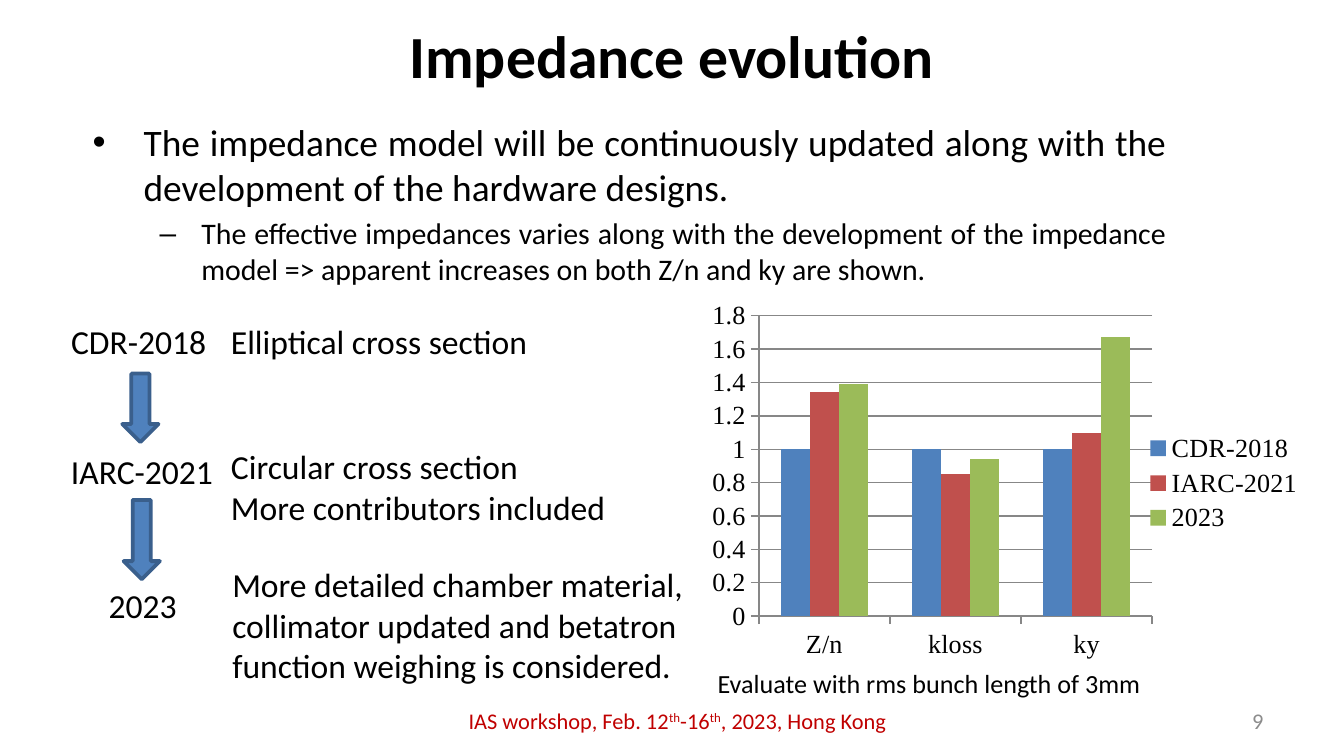
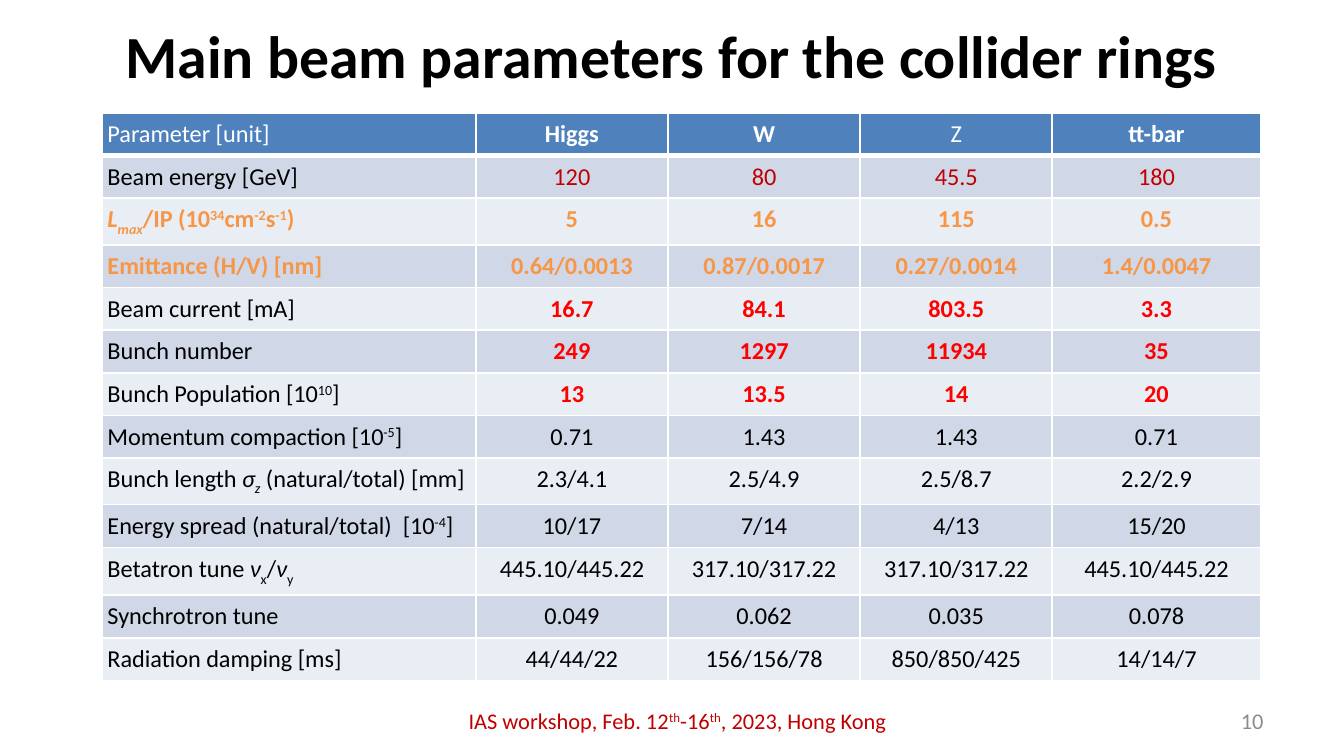
import pptx
import pptx.chart.data
import pptx.dml.color
import pptx.enum.chart
import pptx.enum.shapes
import pptx.enum.text
import pptx.oxml
import pptx.oxml.ns
import pptx.util
from dataclasses import dataclass
from lxml import etree

Inches = pptx.util.Inches
Pt = pptx.util.Pt
qn = pptx.oxml.ns.qn
ALIGN = pptx.enum.text.PP_ALIGN
ANCHOR = pptx.enum.text.MSO_ANCHOR


@dataclass(frozen=True)
class Theme:
    font: str = "Calibri"
    chart_font: str = "Times New Roman"
    black: str = "000000"
    white: str = "FFFFFF"
    blue: str = "4F81BD"
    blue_edge: str = "3A5F8C"
    brick: str = "C0504D"
    green: str = "9BBB59"
    grid: str = "878787"
    number: str = "8C8C8C"
    dark_red: str = "C00000"
    red: str = "FF0000"
    orange: str = "F79646"
    bands: tuple = ("D0D8E8", "E9EDF4")
    title: int = 32
    body: int = 20
    sub: int = 16
    label: int = 18
    note: int = 14
    cell: int = 13
    footer: int = 12


T = Theme()


def rgb(color):
    return pptx.dml.color.RGBColor.from_string(color)


def sup(text):
    return text, 30, False


def sub(text, drop=25, italic=True):
    return text, -drop, italic


def ital(text):
    return text, 0, True


FOOTER = ["IAS workshop, Feb. 12", sup("th"), "-16", sup("th"), ", 2023, Hong Kong"]


class Deck:
    def __init__(self, theme):
        self.t = theme
        self.prs = pptx.Presentation()
        # Widescreen, 16:9
        self.prs.slide_width = Inches(10)
        self.prs.slide_height = Inches(10 * 9 / 16)
        self.s = None

    def slide(self, title, number):
        """Start a slide with the shared title, footer and page number."""
        t = self.t
        self.s = self.prs.slides.add_slide(self.prs.slide_layouts[6])
        self.text(0.5, 0.06, 9, 0.7, [title], t.title, bold=True,
                  align=ALIGN.CENTER, anchor=ANCHOR.MIDDLE)
        self.text(3.27, 5.21, 3.54, 0.3, [FOOTER], t.footer, t.dark_red,
                  align=ALIGN.CENTER, anchor=ANCHOR.MIDDLE)
        self.text(7.17, 5.21, 2.33, 0.3, [str(number)], t.footer, t.number,
                  align=ALIGN.RIGHT, anchor=ANCHOR.MIDDLE)

    def runs(self, p, parts, size, color, bold=False):
        """Fill a paragraph from a string or a list of plain and styled parts."""
        for part in [parts] if isinstance(parts, str) else parts:
            text, base, italic = (part, 0, False) if isinstance(part, str) else part
            r = p.add_run()
            r.text = text
            f = r.font
            f.name, f.size, f.bold, f.italic = self.t.font, Pt(size), bold, italic
            f.color.rgb = rgb(color)
            if base:
                r._r.get_or_add_rPr().set("baseline", str(base * 1000))

    def box(self, x, y, w, h, wrap=True, anchor=ANCHOR.TOP):
        sp = self.s.shapes.add_textbox(Inches(x), Inches(y), Inches(w), Inches(h))
        tf = sp.text_frame
        tf.word_wrap = wrap
        tf.vertical_anchor = anchor
        return tf

    def text(self, x, y, w, h, paragraphs, size, color=T.black, bold=False,
             align=ALIGN.LEFT, anchor=ANCHOR.TOP, wrap=True):
        tf = self.box(x, y, w, h, wrap, anchor)
        for i, parts in enumerate(paragraphs):
            p = tf.add_paragraph() if i else tf.paragraphs[0]
            p.alignment = align
            self.runs(p, parts, size, color, bold)
        return tf

    def label(self, x, y, w, h, paragraphs, size=T.label, wrap=False):
        tf = self.text(x, y, w, h, paragraphs, size, wrap=wrap)
        tf.auto_size = pptx.enum.text.MSO_AUTO_SIZE.SHAPE_TO_FIT_TEXT

    def bullets(self, x, y, w, h, items):
        """Each item is (level, text)."""
        styles = [("•", 0.38, -0.38, self.t.body), ("–", 0.81, -0.31, self.t.sub)]
        tf = self.box(x, y, w, h)
        for i, (level, text) in enumerate(items):
            char, left, indent, size = styles[level]
            p = tf.add_paragraph() if i else tf.paragraphs[0]
            p.alignment = ALIGN.JUSTIFY
            p.level = level
            if i:
                p.space_before = Pt(size * 0.2)
            pPr = p._p.get_or_add_pPr()
            pPr.set("marL", str(Inches(left)))
            pPr.set("indent", str(Inches(indent)))
            etree.SubElement(pPr, qn("a:buFont")).set("typeface", "Arial")
            etree.SubElement(pPr, qn("a:buChar")).set("char", char)
            self.runs(p, text, size, self.t.black)

    def down_arrow(self, x, y, w, h):
        sp = self.s.shapes.add_shape(pptx.enum.shapes.MSO_SHAPE.DOWN_ARROW,
                                     Inches(x), Inches(y), Inches(w), Inches(h))
        sp.shadow.inherit = False
        sp.fill.solid()
        sp.fill.fore_color.rgb = rgb(self.t.blue)
        sp.line.color.rgb = rgb(self.t.blue_edge)
        sp.line.width = Pt(2)

    def columns(self, x, y, w, h, categories, series, plot):
        """Clustered columns; each series is (name, values, color)."""
        data = pptx.chart.data.CategoryChartData()
        data.categories = categories
        for name, values, _ in series:
            data.add_series(name, values)
        chart = self.s.shapes.add_chart(
            pptx.enum.chart.XL_CHART_TYPE.COLUMN_CLUSTERED,
            Inches(x), Inches(y), Inches(w), Inches(h), data).chart
        chart.has_title = False
        chart.font.name = self.t.chart_font
        chart.font.size = Pt(self.t.note)
        chart.font.color.rgb = rgb(self.t.black)
        chart.has_legend = True
        chart.legend.position = pptx.enum.chart.XL_LEGEND_POSITION.RIGHT
        chart.legend.include_in_layout = False
        bars = chart.plots[0]
        bars.gap_width = 150
        bars.vary_by_categories = False
        for ser, (_, _, color) in zip(bars.series, series):
            ser.format.fill.solid()
            ser.format.fill.fore_color.rgb = rgb(color)
        value = chart.value_axis
        value.minimum_scale, value.maximum_scale, value.major_unit = 0, 1.8, 0.2
        value.has_major_gridlines = True
        for part in (value, chart.category_axis, value.major_gridlines):
            part.format.line.color.rgb = rgb(self.t.grid)
        # Fixed inner plot area
        area = chart._chartSpace.chart.plotArea
        for old in area.findall(qn("c:layout")):
            area.remove(old)
        layout = etree.Element(qn("c:layout"))
        manual = etree.SubElement(layout, qn("c:manualLayout"))
        settings = [("layoutTarget", "inner"), ("xMode", "edge"), ("yMode", "edge")]
        for tag, val in settings + list(zip("xywh", plot)):
            etree.SubElement(manual, qn("c:" + tag)).set("val", str(val))
        area.insert(0, layout)

    def borders(self, cell, bottom):
        tcPr = cell._tc.get_or_add_tcPr()
        for i, (side, width) in enumerate(zip("LRTB", (1, 1, 1, bottom))):
            ln = etree.Element(qn("a:ln" + side), w=str(Pt(width)))
            fill = etree.SubElement(ln, qn("a:solidFill"))
            etree.SubElement(fill, qn("a:srgbClr")).set("val", self.t.white)
            tcPr.insert(i, ln)

    def table(self, x, y, height, widths, row_height, header, rows):
        """Header cells are (text, bold); rows are (label, values, style)."""
        t = self.t
        frame = self.s.shapes.add_table(
            len(rows) + 1, len(widths), Inches(x), Inches(y), Inches(sum(widths)),
            Inches(height))
        table = frame.table
        for column, width in zip(table.columns, widths):
            column.width = Inches(width)
        grid = [[(text, t.white, bold) for text, bold in header]]
        for name, values, (name_look, value_look) in rows:
            grid.append([(name, *name_look)] + [(v, *value_look) for v in values])
        for i, line in enumerate(grid):
            table.rows[i].height = Inches(row_height)
            for j, (parts, color, bold) in enumerate(line):
                cell = table.cell(i, j)
                cell.margin_left = cell.margin_right = Inches(0.04)
                cell.margin_top = cell.margin_bottom = Inches(0.05)
                cell.fill.solid()
                cell.fill.fore_color.rgb = rgb(t.bands[(i - 1) % 2] if i else t.blue)
                self.borders(cell, 1 if i else 3)
                p = cell.text_frame.paragraphs[0]
                p.alignment = ALIGN.CENTER if j else ALIGN.LEFT
                self.runs(p, parts, t.cell, color, bold)
        frame.height = Inches(height)


def impedance_slide(d):
    d.slide("Impedance evolution", 9)
    d.bullets(0.59, 0.84, 8.19, 4.18, [
        (0, "The impedance model will be continuously updated along with the "
            "development of the hardware designs."),
        (1, "The effective impedances varies along with the development of the "
            "impedance model => apparent increases on both Z/n and ky are shown."),
    ])

    # Effective impedances by design stage
    d.columns(5.08, 2.18, 4.72, 2.83, ["Z/n", "kloss", "ky"], [
        ("CDR-2018", (1, 1, 1), T.blue),
        ("IARC-2021", (1.34, 0.85, 1.1), T.brick),
        ("2023", (1.39, 0.94, 1.67), T.green),
    ], plot=(0.12, 0.06, 0.62, 0.79))
    d.label(5.24, 4.92, 3.38, 0.34, ["Evaluate with rms bunch length of 3mm"], T.note)

    # Design stages and what changed
    d.label(0.43, 2.34, 1.22, 0.4, ["CDR-2018"])
    d.label(0.43, 3.31, 1.27, 0.4, ["IARC-2021"])
    d.label(0.71, 4.3, 0.71, 0.4, ["2023"])
    d.down_arrow(0.91, 2.78, 0.27, 0.51)
    d.down_arrow(0.92, 3.72, 0.27, 0.59)
    d.label(1.62, 2.34, 2.43, 0.4, ["Elliptical cross section"])
    d.label(1.62, 3.27, 3.02, 0.71,
            ["Circular cross section", "More contributors included"])
    d.label(1.63, 4.15, 3.61, 1.01,
            ["More detailed chamber material, collimator updated and betatron "
             "function weighing is considered."], wrap=True)


def parameters_slide(d):
    d.slide("Main beam parameters for the collider rings", 10)
    # Looks of the label and of the values in a row
    black = (T.black, False)
    plain = (black, black)
    energy = (black, (T.dark_red, False))
    goal = ((T.orange, True), (T.orange, True))
    beam = (black, (T.red, True))
    header = [("Parameter [unit]", False), ("Higgs", True), ("W", True),
              ("Z", False), ("tt-bar", True)]
    rows = [
        ("Beam energy [GeV]", ["120", "80", "45.5", "180"], energy),
        ([ital("L"), sub("max"), "/IP (10", sup("34"), "cm", sup("-2"), "s",
          sup("-1"), ")"], ["5", "16", "115", "0.5"], goal),
        ("Emittance (H/V) [nm]",
         ["0.64/0.0013", "0.87/0.0017", "0.27/0.0014", "1.4/0.0047"], goal),
        ("Beam current [mA]", ["16.7", "84.1", "803.5", "3.3"], beam),
        ("Bunch number", ["249", "1297", "11934", "35"], beam),
        (["Bunch Population [10", sup("10"), "]"], ["13", "13.5", "14", "20"], beam),
        (["Momentum compaction [10", sup("-5"), "]"],
         ["0.71", "1.43", "1.43", "0.71"], plain),
        (["Bunch length ", ital("σ"), sub("z"), " (natural/total) [mm]"],
         ["2.3/4.1", "2.5/4.9", "2.5/8.7", "2.2/2.9"], plain),
        (["Energy spread (natural/total)  [10", sup("-4"), "]"],
         ["10/17", "7/14", "4/13", "15/20"], plain),
        (["Betatron tune ", ital("ν"), sub("x", 30, False), "/", ital("ν"),
          sub("y", 30, False)],
         ["445.10/445.22", "317.10/317.22", "317.10/317.22", "445.10/445.22"], plain),
        ("Synchrotron tune", ["0.049", "0.062", "0.035", "0.078"], plain),
        ("Radiation damping [ms]",
         ["44/44/22", "156/156/78", "850/850/425", "14/14/7"], plain),
    ]
    d.table(0.76, 0.84, 4.12, [2.78, 1.43, 1.43, 1.43, 1.55], 0.28, header, rows)


def main():
    d = Deck(T)
    impedance_slide(d)
    parameters_slide(d)
    d.prs.save("out.pptx")


if __name__ == "__main__":
    main()
